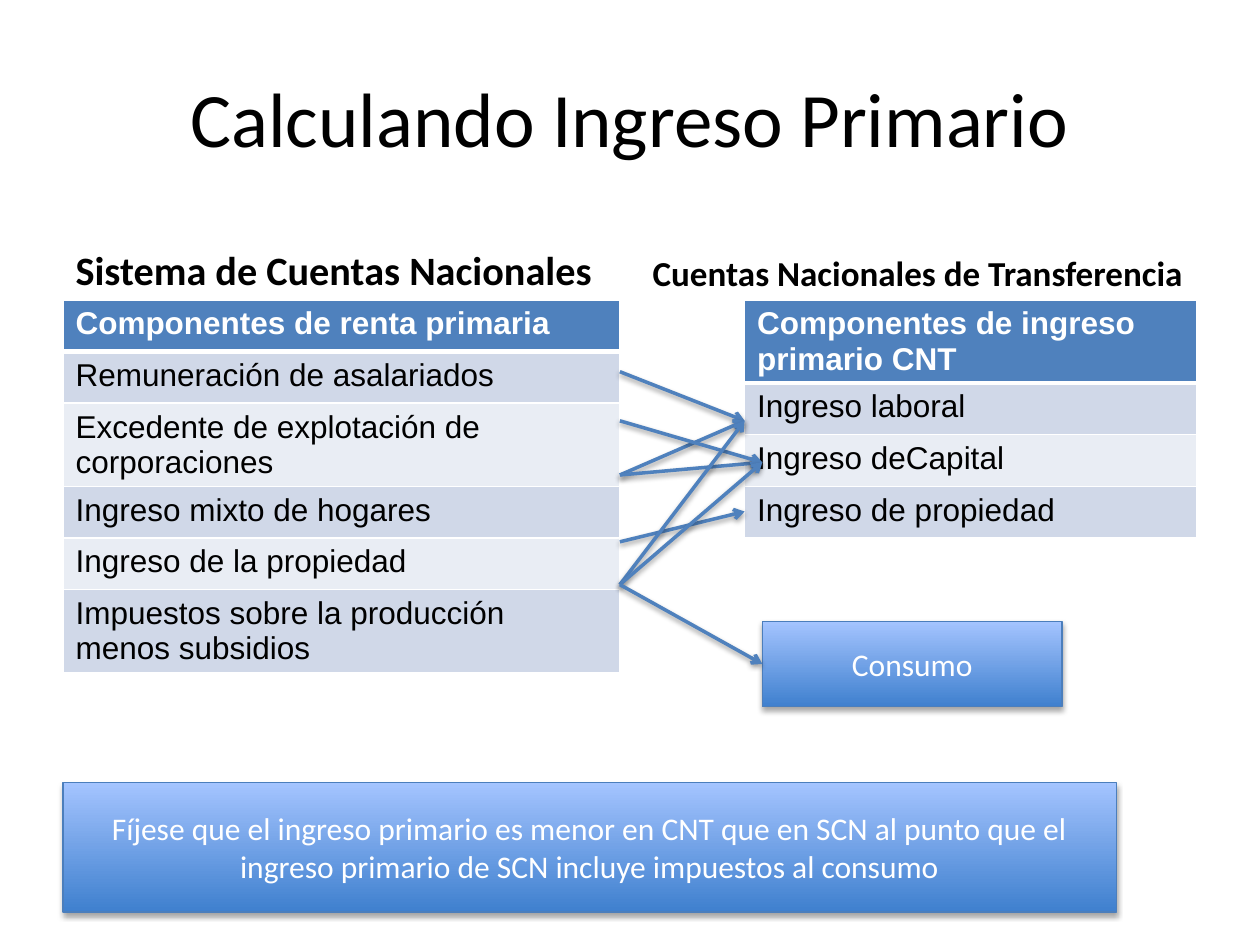
from lxml import etree
from pptx import Presentation
from pptx.dml.color import RGBColor
from pptx.enum.shapes import MSO_CONNECTOR, MSO_SHAPE
from pptx.enum.text import MSO_ANCHOR, MSO_AUTO_SIZE, PP_ALIGN
from pptx.oxml import parse_xml
from pptx.oxml.ns import qn
from pptx.util import Inches, Pt

LINE = MSO_CONNECTOR.STRAIGHT
RECT = MSO_SHAPE.RECTANGLE
MIDDLE, BOTTOM = MSO_ANCHOR.MIDDLE, MSO_ANCHOR.BOTTOM
CENTER, LEFT = PP_ALIGN.CENTER, PP_ALIGN.LEFT
FIXED = MSO_AUTO_SIZE.NONE
NS = 'xmlns:a="http://schemas.openxmlformats.org/drawingml/2006/main"'
BLUE, WHITE, BLACK = "4F81BD", "FFFFFF", "000000"
BANDS = ("D0D8E8", "E9EDF4")


def tint(color, code):
    color.rgb = RGBColor.from_string(code)


def write(frame, text, size, color, align, anchor, face="Calibri", bold=False):
    frame.word_wrap = True
    frame.vertical_anchor = anchor
    para = frame.paragraphs[0]
    para.alignment = align
    para.space_before = Pt(0)
    run = para.add_run()
    run.text = text
    run.font.size = Pt(size)
    run.font.name = face
    run.font.bold = bold
    tint(run.font.color, color)


def shade(shape, dist, alpha):
    props = shape._element.spPr
    for old in props.findall(qn("a:effectLst")):
        props.remove(old)
    props.append(parse_xml(
        f'<a:effectLst {NS}><a:outerShdw blurRad="40000" dist="{dist}" '
        f'dir="5400000" rotWithShape="0"><a:srgbClr val="{BLACK}">'
        f'<a:alpha val="{alpha}"/></a:srgbClr></a:outerShdw></a:effectLst>'))


def add_head(holder, box, text, size, align=LEFT, anchor=BOTTOM, bold=True):
    holder.left, holder.top, holder.width, holder.height = map(Inches, box)
    write(holder.text_frame, text, size, BLACK, align, anchor, bold=bold)
    holder.text_frame.auto_size = FIXED


def add_edges(cell, top, bottom):
    props = cell._tc.get_or_add_tcPr()
    for side, width in (("L", 1), ("R", 1), ("T", top), ("B", bottom)):
        props.append(parse_xml(
            f'<a:ln{side} {NS} w="{Pt(width)}"><a:solidFill>'
            f'<a:srgbClr val="{WHITE}"/></a:solidFill></a:ln{side}>'))


def add_grid(slide, box, rows):
    table = slide.shapes.add_table(len(rows), 1, *map(Inches, box)).table
    for i, text in enumerate(rows):
        table.rows[i].height = Inches(0.41)
        cell = table.cell(i, 0)
        head = i == 0
        add_edges(cell, 3 if i == 1 else 1, 3 if head else 1)
        cell.fill.solid()
        tint(cell.fill.fore_color, BLUE if head else BANDS[(i - 1) % 2])
        write(cell.text_frame, text, 18, WHITE if head else BLACK,
              LEFT, MSO_ANCHOR.TOP, "Arial", head)


def add_panel(slide, box, text):
    panel = slide.shapes.add_shape(RECT, *map(Inches, box))
    panel.fill.gradient()
    panel.fill.gradient_angle = 90
    for stop, code in zip(panel.fill.gradient_stops, ("3F80CE", "A4C4FF")):
        tint(stop.color, code)
    tint(panel.line.color, "4B7EBC")
    panel.line.width = Pt(0.75)
    shade(panel, 23000, 35000)
    write(panel.text_frame, text, 18, WHITE, CENTER, MIDDLE)
    return panel


def add_arrow(slide, start, end):
    arrow = slide.shapes.add_connector(LINE, *map(Inches, (*start, *end)))
    tint(arrow.line.color, BLUE)
    arrow.line.width = Pt(2)
    etree.SubElement(arrow.line._get_or_add_ln(), qn("a:tailEnd"), type="arrow")
    shade(arrow, 20000, 38000)
    return arrow


def add_links(slide, x, panel):
    work, wealth, rent = (5.91, 3.34), (6.05, 3.67), (5.91, 4.06)
    flows = ((2.95, work), (3.77, work), (3.77, wealth), (3.34, wealth),
             (4.3, rent), (4.64, work), (4.64, wealth))
    for y, end in flows:
        add_arrow(slide, (x, y), end)
    add_arrow(slide, (x, 4.64), (6.05, 5.27)).end_connect(panel, 1)


def main():
    deck = Presentation()
    deck.slide_width, deck.slide_height = Inches(10), Inches(7.5)
    slide = deck.slides.add_slide(deck.slide_layouts[4])
    title, left, spare, right, extra = slide.placeholders
    for holder in (spare, extra):
        holder._element.getparent().remove(holder._element)

    add_head(title, (0.5, 0.3, 9, 1.25), "Calculando Ingreso Primario",
             44, CENTER, MIDDLE, False)
    add_head(left, (0.5, 1.68, 4.42, 0.7), "Sistema de Cuentas Nacionales", 23)
    add_grid(slide, (0.5, 2.38, 4.42, 2.46), (
        "Componentes de renta primaria",
        "Remuneración de asalariados",
        "Excedente de explotación de corporaciones",
        "Ingreso mixto de hogares",
        "Ingreso de la propiedad",
        "Impuestos sobre la producción menos subsidios"))
    add_head(right, (5.08, 1.68, 4.42, 0.7),
             "Cuentas Nacionales de Transferencia", 20)
    add_grid(slide, (5.91, 2.38, 3.59, 1.64), (
        "Componentes de ingreso primario CNT",
        "Ingreso laboral",
        "Ingreso deCapital",
        "Ingreso de propiedad"))
    panel = add_panel(slide, (6.05, 4.93, 2.38, 0.68), "Consumo")
    add_links(slide, 4.92, panel)
    add_panel(slide, (0.5, 6.21, 8.36, 1.03),
              "Fíjese que el ingreso primario es menor en CNT que en SCN al "
              "punto que el ingreso primario de SCN incluye impuestos al consumo")
    deck.save("out.pptx")


if __name__ == "__main__":
    main()
